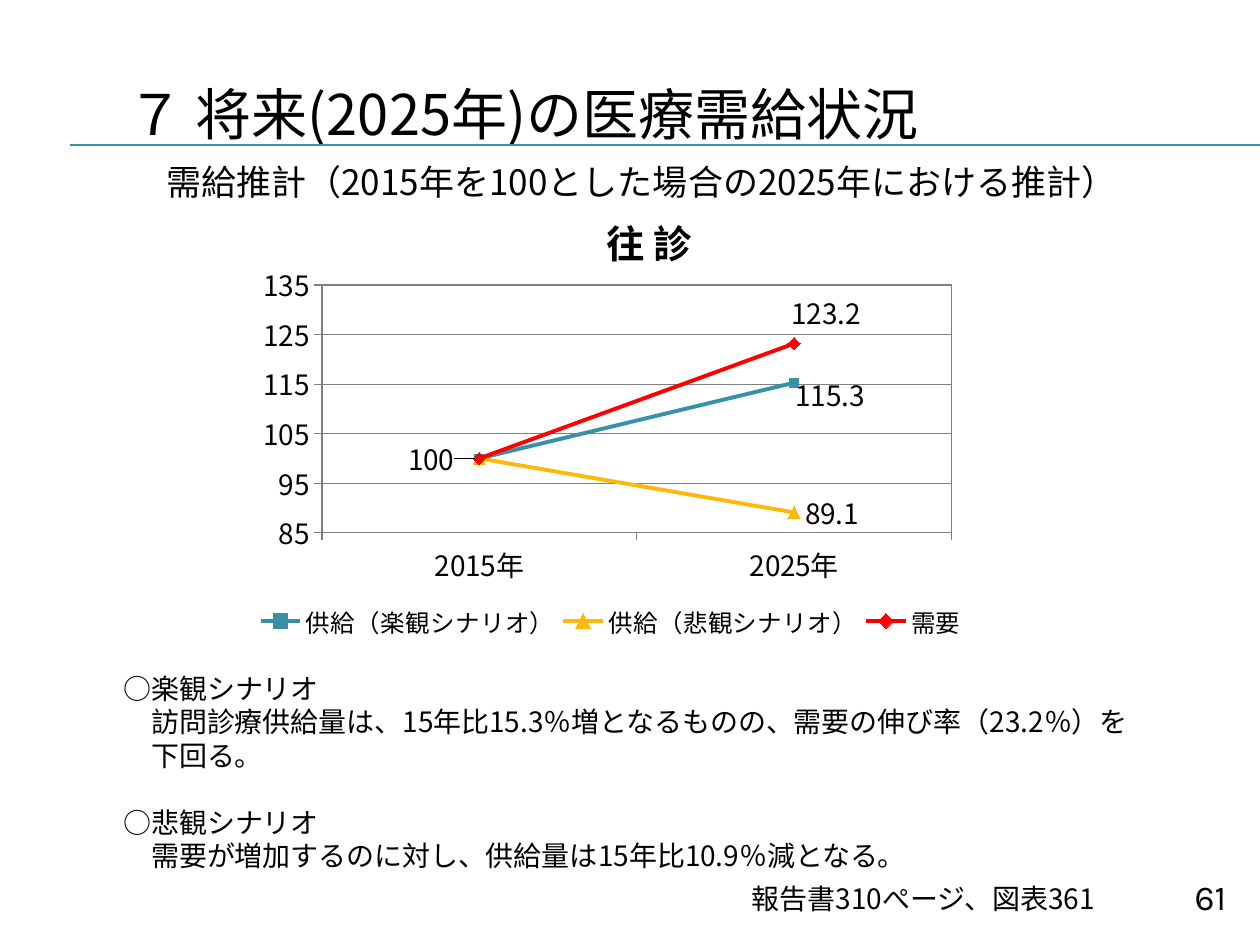
from lxml import etree
from pptx import Presentation
from pptx.chart.data import CategoryChartData
from pptx.dml.color import RGBColor
from pptx.enum.chart import (XL_CHART_TYPE, XL_LABEL_POSITION, XL_LEGEND_POSITION,
                             XL_MARKER_STYLE, XL_TICK_MARK)
from pptx.enum.shapes import MSO_CONNECTOR
from pptx.enum.text import MSO_ANCHOR, PP_ALIGN
from pptx.oxml import parse_xml
from pptx.oxml.ns import nsdecls, qn
from pptx.util import Cm, Pt

LINE_CHART = XL_CHART_TYPE.LINE_MARKERS
SQUARE, TRIANGLE, DIAMOND = (XL_MARKER_STYLE.SQUARE, XL_MARKER_STYLE.TRIANGLE,
                             XL_MARKER_STYLE.DIAMOND)
LABEL_LEFT, LABEL_RIGHT, LABEL_ABOVE = (XL_LABEL_POSITION.LEFT, XL_LABEL_POSITION.RIGHT,
                                        XL_LABEL_POSITION.ABOVE)
LEFT, CENTER, RIGHT = PP_ALIGN.LEFT, PP_ALIGN.CENTER, PP_ALIGN.RIGHT
TITLE_ONLY = 5
BLACK, GRAY, TEAL, AMBER, RED = "000000", "808080", "3891A7", "FEB80A", "FF0000"

CATEGORIES = ["2015年", "2025年"]
SERIES = [
    ("供給（楽観シナリオ）", [100, 115.3], TEAL, SQUARE, 5,
     [(0, LABEL_LEFT, -0.02, 0), (1, LABEL_RIGHT, -0.01, 0.03)]),
    ("供給（悲観シナリオ）", [100, 89.1], AMBER, TRIANGLE, 7, [(1, LABEL_RIGHT, 0, 0)]),
    ("需要", [100, 123.2], RED, DIAMOND, 7, [(1, LABEL_ABOVE, 0.04, 0)]),
]
SCENARIOS = [
    ("○楽観シナリオ", 0, 0),
    ("訪問診療供給量は、15年比15.3％増となるものの、需要の伸び率（23.2％）を", 0.56, 0),
    ("下回る。", 0.56, 0),
    ("○悲観シナリオ", 0, 19),
    ("需要が増加するのに対し、供給量は15年比10.9％減となる。", 0.56, 0),
]


def color(value):
    return RGBColor.from_string(value)


class SlideBuilder:
    font_name = "Noto Sans CJK JP"
    number_font = "Karla"

    def __init__(self, slide):
        self.slide = slide

    def style_font(self, font, size, bold=False, name=None):
        font.name = name or self.font_name
        font.size = Pt(size)
        font.bold = bold
        font.color.rgb = color(BLACK)

    def match_east_asian(self, element):
        for latin in list(element.iter(qn("a:latin"))):
            east_asian = etree.Element(qn("a:ea"), typeface=latin.get("typeface"))
            latin.addnext(east_asian)

    def place(self, shape, left, top, width, height):
        shape.left, shape.top = Cm(left), Cm(top)
        shape.width, shape.height = Cm(width), Cm(height)

    def title(self, text, box):
        shape = self.slide.shapes.title
        self.place(shape, *box)
        frame = shape.text_frame
        frame.text = text
        frame.vertical_anchor = MSO_ANCHOR.MIDDLE
        paragraph = frame.paragraphs[0]
        paragraph.alignment = LEFT
        self.style_font(paragraph.runs[0].font, 32)
        self.match_east_asian(shape.element)

    def text(self, lines, box, size, align=LEFT, bold=False, name=None, spacing=None):
        shape = self.slide.shapes.add_textbox(*[Cm(length) for length in box])
        frame = shape.text_frame
        frame.word_wrap = True
        frame.text = "\n".join(line for line, _, _ in lines)
        for paragraph, (_, indent, gap) in zip(frame.paragraphs, lines):
            paragraph.alignment = align
            if spacing:
                paragraph.line_spacing = Pt(spacing)
            if gap:
                paragraph.space_before = Pt(gap)
            if indent:
                paragraph._p.get_or_add_pPr().set("marL", str(Cm(indent)))
            self.style_font(paragraph.runs[0].font, size, bold, name)
        self.match_east_asian(shape.element)

    def line(self, left, right, top):
        connector = self.slide.shapes.add_connector(
            MSO_CONNECTOR.STRAIGHT, Cm(left), Cm(top), Cm(right), Cm(top))
        connector.line.color.rgb = color(TEAL)
        connector.line.width = Pt(0.75)
        etree.SubElement(connector.element.spPr, qn("a:effectLst"))

    def layout(self, x, y, width=None, height=None, mode="edge", target=None):
        parts = []
        if target:
            parts.append(("layoutTarget", target))
        if mode == "edge":
            parts += [("xMode", mode), ("yMode", mode)]
        parts += [("x", x), ("y", y)]
        if width:
            parts += [("w", width), ("h", height)]
        body = "".join(f'<c:{tag} val="{value}"/>' for tag, value in parts)
        return parse_xml(f'<c:layout {nsdecls("c")}><c:manualLayout>{body}'
                         '</c:manualLayout></c:layout>')

    def style_axis(self, axis):
        axis.major_tick_mark = XL_TICK_MARK.OUTSIDE
        axis.minor_tick_mark = XL_TICK_MARK.NONE
        axis.format.line.color.rgb = color(GRAY)
        axis.format.line.width = Pt(0.75)
        self.style_font(axis.tick_labels.font, 16)

    def style_series(self, series, line_color, marker, marker_size, labels):
        series.smooth = False
        series.format.line.color.rgb = color(line_color)
        series.format.line.width = Pt(2.25)
        series.marker.style = marker
        series.marker.size = marker_size
        series.marker.format.fill.solid()
        series.marker.format.fill.fore_color.rgb = color(line_color)
        series.marker.format.line.color.rgb = color(line_color)
        for index, position, x, y in labels:
            label = series.points[index].data_label
            self.style_font(label.font, 16)
            label.position = position
        for element, (_, _, x, y) in zip(series._element.iter(qn("c:dLbl")), labels):
            if x or y:
                element.find(qn("c:idx")).addnext(self.layout(x, y, mode="factor"))

    def line_chart(self, box):
        data = CategoryChartData()
        data.categories = CATEGORIES
        for name, values, *_ in SERIES:
            data.add_series(name, values)
        chart = self.slide.shapes.add_chart(
            LINE_CHART, *[Cm(length) for length in box], data).chart
        chart.has_title = False
        self.style_font(chart.font, 10, name=self.number_font)
        chart.plots[0].vary_by_categories = False
        for series, (_, _, *style) in zip(chart.plots[0].series, SERIES):
            self.style_series(series, *style)

        self.style_axis(chart.category_axis)
        axis = chart.value_axis
        self.style_axis(axis)
        axis.minimum_scale, axis.maximum_scale, axis.major_unit = 85, 135, 10
        axis.has_major_gridlines = True
        axis.major_gridlines.format.line.color.rgb = color(GRAY)
        axis.major_gridlines.format.line.width = Pt(0.75)

        chart.has_legend = True
        legend = chart.legend
        legend.position = XL_LEGEND_POSITION.TOP
        legend.include_in_layout = False
        self.style_font(legend.font, 14)
        for old in legend._element.findall(qn("c:layout")):
            legend._element.remove(old)
        legend._element.find(qn("c:legendPos")).addnext(self.layout(0.05, 0.87, 0.9, 0.1))

        plot_area = chart._chartSpace.chart.plotArea
        for old in plot_area.findall(qn("c:layout")):
            plot_area.remove(old)
        plot_area.insert(0, self.layout(0.137, 0.077, 0.791, 0.622, target="inner"))
        plot_area.append(parse_xml(
            f'<c:spPr {nsdecls("c", "a")}><a:noFill/><a:ln w="9525"><a:solidFill>'
            f'<a:srgbClr val="{GRAY}"/></a:solidFill></a:ln></c:spPr>'))
        self.match_east_asian(chart._chartSpace)


def main():
    presentation = Presentation()
    presentation.slide_width, presentation.slide_height = Cm(25.4), Cm(19.05)
    slide = presentation.slides.add_slide(presentation.slide_layouts[TITLE_ONLY])
    builder = SlideBuilder(slide)
    for top in (2.92, 2.94):
        builder.line(1.42, 25.4, top)
    builder.title("７ 将来(2025年)の医療需給状況", (2.31, 1.12, 24.13, 2.34))
    builder.line_chart((4.29, 5.13, 16.05, 8.03))
    builder.text([("需給推計（2015年を100とした場合の2025年における推計）", 0, 0)],
                 (3.1, 3.12, 22.3, 1.12), 20)
    builder.text(SCENARIOS, (2.24, 13.41, 21.79, 4.45), 16, spacing=19.2)
    builder.text([("61", 0, 0)], (22.86, 17.53, 2.11, 1.14), 20, RIGHT,
                 name=builder.number_font)
    builder.text([("往 診", 0.78, 0)], (3.3, 4.32, 18.8, 1.19), 22, CENTER, bold=True)
    builder.text([("報告書310ぺージ、図表361", 0, 0)], (14.91, 17.65, 8.26, 0.99), 16)
    presentation.save("out.pptx")


if __name__ == "__main__":
    main()
